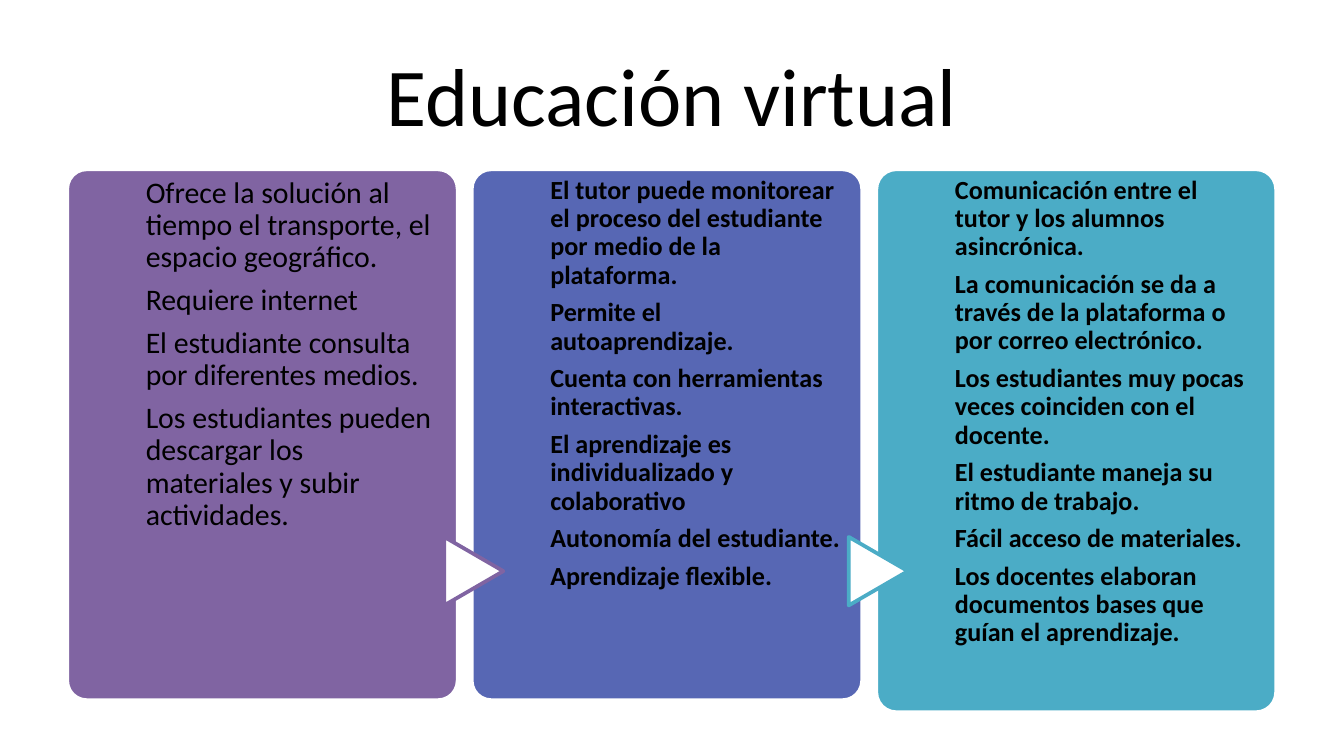
from pptx import Presentation
from pptx.dml.color import RGBColor as RGB
from pptx.enum.shapes import MSO_SHAPE as Kind
from pptx.enum.text import MSO_ANCHOR as Anchor, PP_ALIGN as Align
from pptx.util import Pt

PX = 4572  # 200 px to the inch

THEME = {
    "font": "Calibri",
    "ink": "000000",
    "paper": "FFFFFF",
    "purple": "8064A2",
    "blue": "5767B4",
    "teal": "4BACC6",
    "title": 44,
    "large": 16,
    "small": 14,
    "line": 2,
}


def add_text(lines, box, size, bold=False, align=Align.LEFT,
             anchor=Anchor.TOP, top=0, pitch=1.0, after=0):
    frame = slide.shapes.add_textbox(*[n * PX for n in box]).text_frame
    frame.word_wrap = True
    frame.vertical_anchor = anchor
    frame.margin_left = frame.margin_right = frame.margin_bottom = 0
    frame.margin_top = top * PX
    for i, line in enumerate(lines):
        para = frame.paragraphs[0] if i == 0 else frame.add_paragraph()
        para.alignment = align
        para.line_spacing = pitch
        para.space_after = Pt(after)
        run = para.add_run()
        run.text = line
        run.font.name = THEME["font"]
        run.font.size = Pt(size)
        run.font.bold = bold
        run.font.color.rgb = RGB.from_string(THEME["ink"])


def add_form(kind, box, fill, line):
    form = slide.shapes.add_shape(kind, *[n * PX for n in box])
    form.shadow.inherit = False
    form.fill.solid()
    form.fill.fore_color.rgb = RGB.from_string(THEME[fill])
    form.line.color.rgb = RGB.from_string(THEME[line])
    form.line.width = Pt(THEME["line"])
    return form


deck = Presentation()
deck.slide_width, deck.slide_height = 2000 * PX, 1125 * PX
slide = deck.slides.add_slide(deck.slide_layouts[6])

# Title
add_text(["Educación virtual"], (100, 46, 1800, 188), THEME["title"],
         align=Align.CENTER, anchor=Anchor.MIDDLE)

# Panels: fill, arrow outline, size, width, text width, height, lines
panels = [
    ("purple", None, "large", 581, 432, 790, [
        "Ofrece la solución al tiempo el transporte, el espacio geográfico.",
        "Requiere internet",
        "El estudiante consulta por diferentes medios.",
        "Los estudiantes pueden descargar los materiales y subir actividades.",
    ]),
    ("blue", "purple", "small", 581, 432, 790, [
        "El tutor puede monitorear el proceso del estudiante por medio de la plataforma.",
        "Permite el autoaprendizaje.",
        "Cuenta con herramientas interactivas.",
        "El aprendizaje es individualizado y colaborativo",
        "Autonomía del estudiante.",
        "Aprendizaje flexible.",
    ]),
    ("teal", "teal", "small", 595, 444, 808, [
        "Comunicación entre el tutor y los alumnos asincrónica.",
        "La comunicación se da a través de la plataforma o por correo electrónico.",
        "Los estudiantes muy pocas veces coinciden con el docente.",
        "El estudiante maneja su ritmo de trabajo.",
        "Fácil acceso de materiales.",
        "Los docentes elaboran documentos bases que guían el aprendizaje.",
    ]),
]

LEFT, TOP, STEP = 100, 252, 602
for i, (fill, edge, size, wide, span, high, lines) in enumerate(panels):
    x = LEFT + i * STEP
    card = add_form(Kind.ROUNDED_RECTANGLE, (x, TOP, wide, high), fill, "paper")
    card.adjustments[0] = 0.05

    # Arrow from the panel before
    if edge:
        arrow = add_form(Kind.FLOWCHART_EXTRACT, (x - 48, 806, 102, 88), "paper", edge)
        arrow.rotation = 90

    # Points in the panel
    large = size == "large"
    add_text(lines, (x + 117, TOP, span, high), THEME[size], bold=not large,
             top=12 if large else 11, pitch=0.9, after=0.36 * THEME[size])

deck.save("out.pptx")
